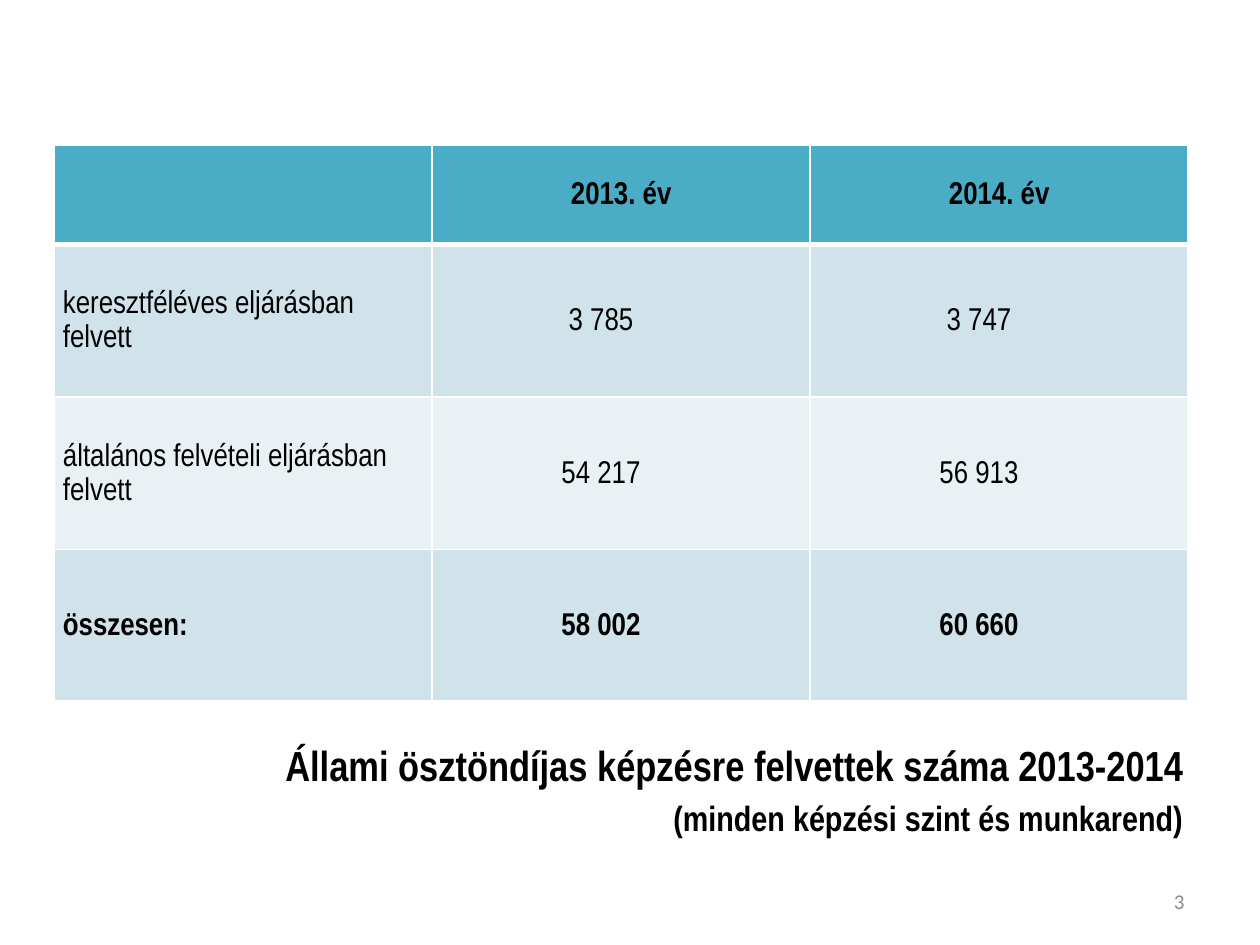
"""Build a slide with a table of admitted state-scholarship students."""
from dataclasses import dataclass

from lxml.etree import SubElement
from pptx import Presentation
from pptx.dml.color import RGBColor
from pptx.enum.text import MSO_ANCHOR, MSO_AUTO_SIZE, PP_ALIGN
from pptx.oxml.ns import qn
from pptx.util import Inches, Pt

HEAD = ["", "2013. év", "2014. év"]
BODY = [
    ["keresztféléves eljárásban felvett", "3 785", "3 747"],
    ["általános felvételi eljárásban felvett", "54 217", "56 913"],
    ["összesen:", "58 002", "60 660"],
]
TITLE = [
    "Állami ösztöndíjas képzésre felvettek száma 2013-2014",
    "(minden képzési szint és munkarend)",
]
NUMBER = "3"


@dataclass(frozen=True)
class Theme:
    """Colours, fonts and type sizes."""
    ink: str = "000000"
    muted: str = "8C8C8C"
    rule: str = "FFFFFF"
    head: str = "4BACC6"
    bands: tuple = ("D0E3EA", "E9F1F5")
    font: str = "Arial Narrow"
    plain: str = "Calibri"
    cell: int = 18
    title: tuple = (24, 20)
    note: int = 12
    leading: float = 1.15


THEME = Theme()


def place(shape, left, top, width, height):
    """Move and size a shape in inches."""
    shape.left, shape.top = Inches(left), Inches(top)
    shape.width, shape.height = Inches(width), Inches(height)


def style(para, size, bold, align, name=THEME.font, color=THEME.ink):
    """Format a paragraph and its runs."""
    para.alignment = align
    for run in para.runs:
        font = run.font
        font.name, font.size, font.bold = name, Pt(size), bold
        font.color.rgb = RGBColor.from_string(color)


def border(cell, base):
    """Draw the four borders of a cell, before its fill is set."""
    props = cell._tc.get_or_add_tcPr()
    for side, width in (("L", 1), ("R", 1), ("T", 1), ("B", base)):
        line = SubElement(props, qn(f"a:ln{side}"), w=str(Pt(width)))
        fill = SubElement(line, qn("a:solidFill"))
        SubElement(fill, qn("a:srgbClr"), val=THEME.rule)


def add_grid(slide):
    """Add the table with a header and banded rows."""
    rows = [HEAD] + BODY
    frame = slide.shapes.add_table(
        len(rows), len(HEAD), Inches(0.43), Inches(1.15), Inches(9), Inches(4.41))
    grid = frame.table
    for row, height in zip(grid.rows, (0.79, 1.21, 1.21, 1.2)):
        row.height = Inches(height)
    for r, texts in enumerate(rows):
        for c, text in enumerate(texts):
            cell = grid.cell(r, c)
            border(cell, 1 if r else 3)
            cell.fill.solid()
            color = THEME.bands[(r - 1) % 2] if r else THEME.head
            cell.fill.fore_color.rgb = RGBColor.from_string(color)
            cell.vertical_anchor = MSO_ANCHOR.MIDDLE
            cell.margin_left = cell.margin_right = Inches(0.07)
            cell.margin_top = cell.margin_bottom = 0
            cell.text_frame.text = text
            para = cell.text_frame.paragraphs[0]
            para.line_spacing = THEME.leading
            style(para, THEME.cell, r in (0, len(BODY)),
                  PP_ALIGN.CENTER if c else PP_ALIGN.LEFT)
            if r and c:
                para._p.get_or_add_pPr().set("marR", str(Inches(0.32)))


def add_title(slide):
    """Fill the title placeholder below the table."""
    title = slide.shapes.title
    place(title, 1.22, 5.76, 8.27, 0.95)
    frame = title.text_frame
    frame.text = "\n".join(TITLE)
    frame.word_wrap = True
    frame.auto_size = MSO_AUTO_SIZE.SHAPE_TO_FIT_TEXT
    frame.vertical_anchor = MSO_ANCHOR.TOP
    for para, size in zip(frame.paragraphs, THEME.title):
        para.line_spacing = THEME.leading
        style(para, size, True, PP_ALIGN.RIGHT)


def add_number(slide):
    """Add the slide number."""
    box = slide.shapes.add_textbox(
        Inches(7.17), Inches(6.95), Inches(2.33), Inches(0.4))
    frame = box.text_frame
    frame.text = NUMBER
    frame.word_wrap = True
    frame.vertical_anchor = MSO_ANCHOR.MIDDLE
    style(frame.paragraphs[0], THEME.note, False, PP_ALIGN.RIGHT,
          THEME.plain, THEME.muted)


def main():
    """Build and save the slide."""
    deck = Presentation()
    deck.slide_width, deck.slide_height = Inches(10), Inches(7.5)
    slide = deck.slides.add_slide(deck.slide_layouts[5])
    add_grid(slide)
    add_title(slide)
    add_number(slide)
    deck.save("out.pptx")


if __name__ == "__main__":
    main()
